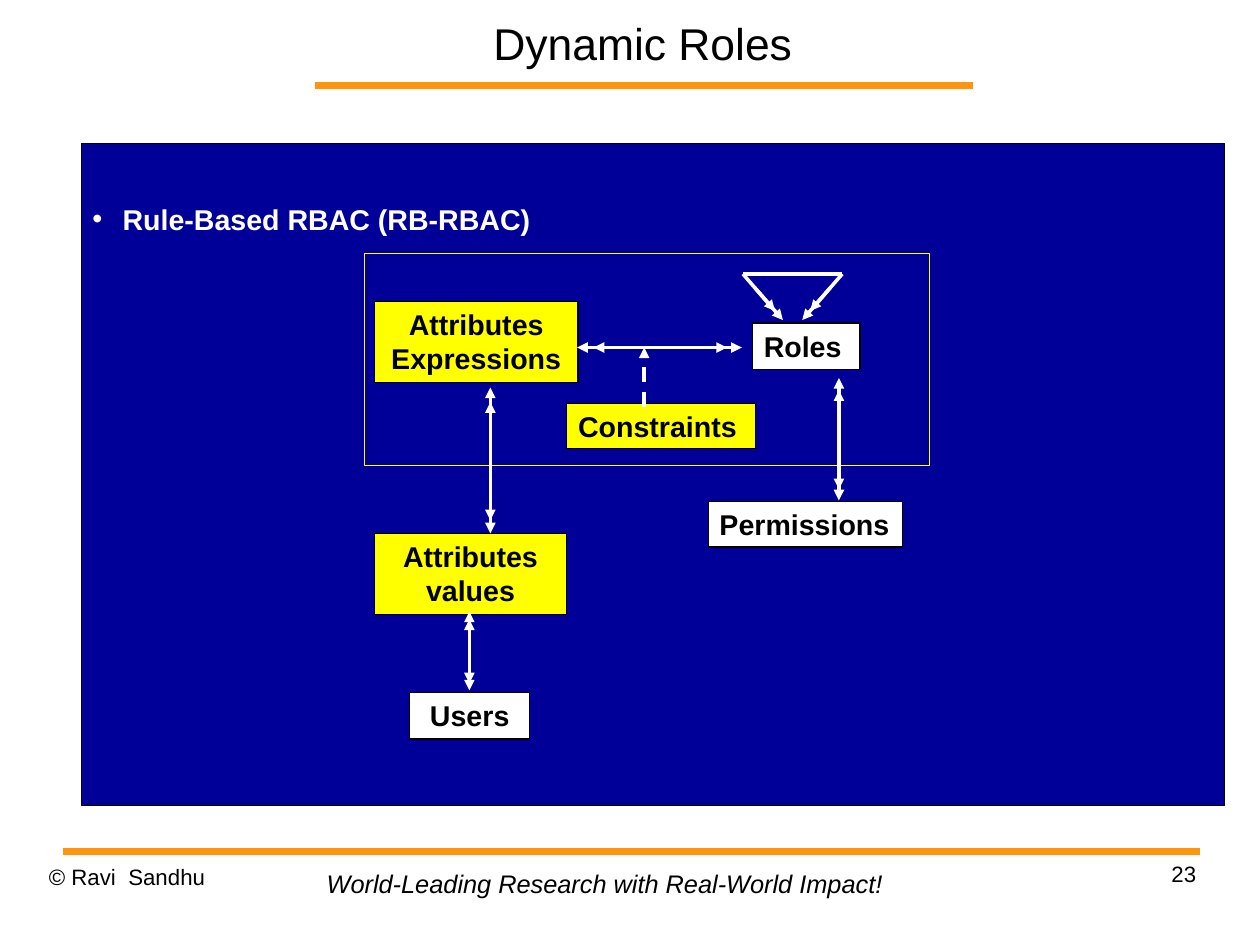
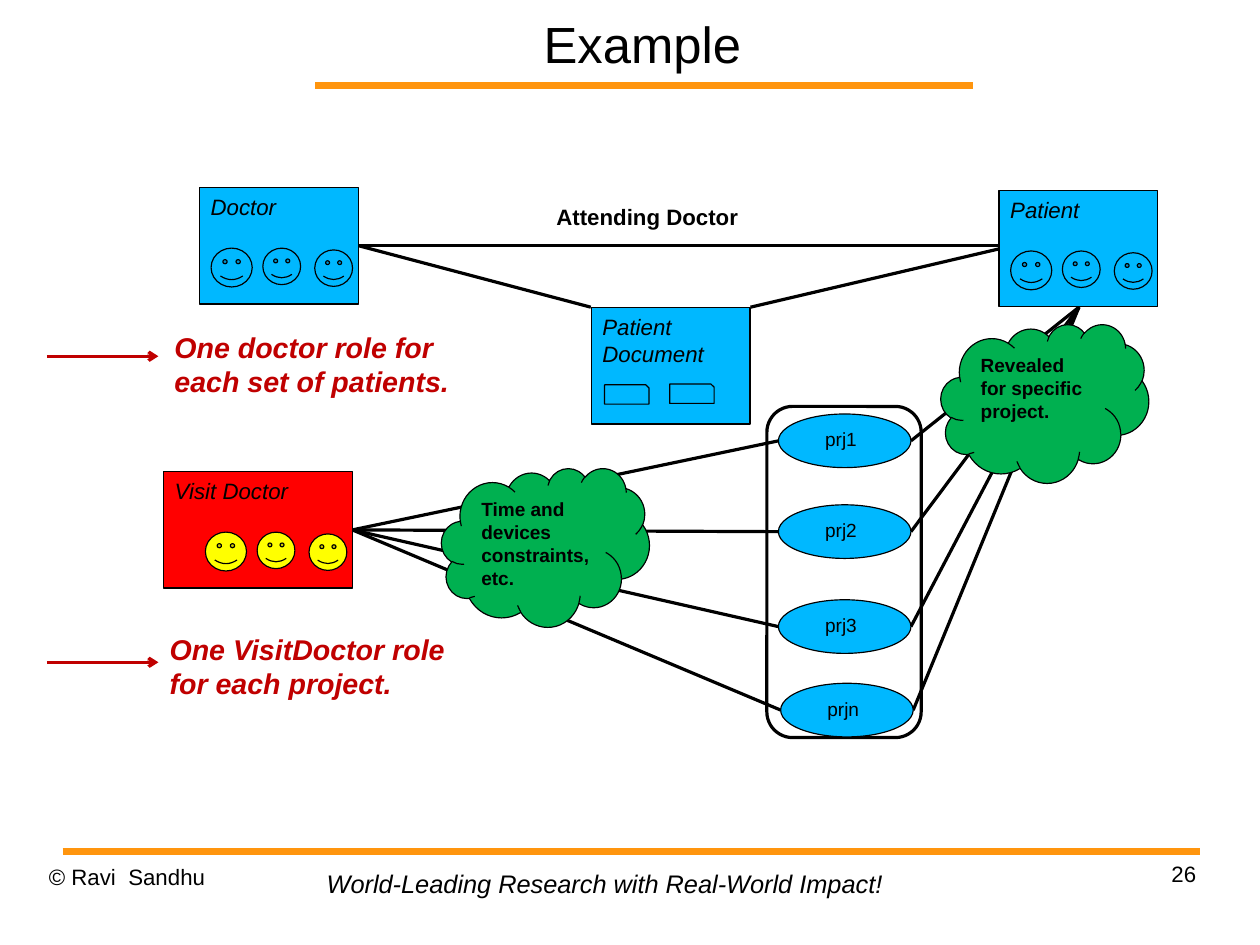
from lxml.etree import SubElement
from pptx import Presentation
from pptx.dml.color import RGBColor
from pptx.enum.dml import MSO_LINE
from pptx.enum.shapes import MSO_CONNECTOR, MSO_SHAPE as SHAPE
from pptx.enum.text import MSO_ANCHOR as ANCHOR, MSO_AUTO_SIZE, PP_ALIGN as ALIGN
from pptx.oxml.ns import qn
from pptx.util import Pt

# Shared look
SLIDE_W, SLIDE_H = 793.75, 595.25
FONT = "Arial"
BLACK, WHITE, YELLOW, ORANGE = "000000", "FFFFFF", "FFFF00", "FF950E"
NAVY, SKY, RED, GREEN, CRIMSON = "000099", "00B8FF", "FF0000", "00B050", "C00000"
INSETS = (7.2, 3.6, 7.2, 3.6)
NO_INSETS = (0, 0, 0, 0)

TITLE_BOX = (173.3, 0, 463, 54)
RULES = [((198.7, 54), (612.7, 54)), ((39.4, 536.2), (755.8, 536.2))]
COPYRIGHT = "© Ravi  Sandhu"
TAGLINE = "World-Leading Research with Real-World Impact!"

# Slide 1: text, box, fill, alignment
PANEL = (51.2, 90.2, 720, 417.2)
RBAC_FRAME = (229.7, 159.8, 356, 133.2)
RBAC_BOXES = [
    ("Attributes\nExpressions", (235.9, 189.8, 128.2, 51.1), YELLOW, ALIGN.CENTER),
    ("Users", (258.1, 436, 75.6, 29.5), WHITE, ALIGN.CENTER),
    ("Roles", (474.1, 203.4, 67.7, 29.5), WHITE, ALIGN.LEFT),
    ("Permissions", (446.2, 315.8, 122.4, 28.8), WHITE, ALIGN.LEFT),
    ("Constraints", (357.1, 254, 118.8, 28.8), YELLOW, ALIGN.LEFT),
    ("Attributes\nvalues", (235.9, 335.9, 121, 51.1), YELLOW, ALIGN.CENTER),
]
MANY_TO_MANY = [
    ((528.5, 238.1), (528.5, 315.2)),
    ((308.9, 244.1), (308.9, 336)),
    ((363.6, 218.9), (467.3, 218.9)),
    ((295.7, 385.2), (295.7, 434.9)),
]
CONSTRAINT_ARROW = ((405.8, 256.1), (405.8, 218.9))
HIERARCHY_TOP = ((468, 172.6), (530.6, 172.6))
HIERARCHY_TIPS = ((493.2, 201.6), (505.4, 201.6))

# Slide 2
ROLE_BOXES = [  # text, box, fill, face fill
    ("Doctor", (125.6, 118.1, 100.1, 73.4), SKY, SKY),
    ("Patient", (629.3, 119.9, 100.1, 73.4), SKY, SKY),
    ("Patient Document", (372.4, 193.7, 100.1, 73.4), SKY, None),
    ("Visit Doctor", (103, 297, 119.1, 73.4), RED, YELLOW),
]
FACES = [  # distance from right edge, distance from top, width, height
    (92.7, 38.2, 25.9, 24.5),
    (60.1, 38.2, 23.8, 23),
    (27.4, 39.3, 23.8, 23),
]
PAGES = [(380.9, 242.4, 28, 12.2), (421.9, 241.9, 28, 12.2)]
CARE_LINES = [
    ((226, 154.8), (629.3, 154.8)),
    ((226, 154.8), (372.2, 193.5)),
    ((472.8, 193.5), (629.3, 156.8)),
]
PROJECT_FRAME = (483.1, 256, 97.2, 208.6)
PROJECTS = [("prj1", 490.4, 260.8), ("prj2", 490.4, 318),
            ("prj3", 490.4, 377.8), ("prjn", 491.8, 430.4)]
PROJECT_W, PROJECT_H = 83.5, 33.8
VISIT_DOCTOR_PORT, PATIENT_PORT = (222, 333.8), (679.7, 193.5)
CLOUDS = [
    ("Time and devices constraints, etc.", (278.1, 294.9, 131, 100)),
    ("Revealed for specific project.", (592.7, 204.2, 131, 100)),
]
REMARKS = [  # text, box, arrow height
    ("One doctor role for each set of patients.", (102.8, 204.1, 189.4, 48.6), 224.4),
    ("One VisitDoctor role for each project.", (99.8, 394.6, 189.4, 48.6), 417.2),
]


def rgb(value):
    return RGBColor.from_string(value)


def write(frame, text, size, color=BLACK, bold=False, italic=False,
          align=ALIGN.LEFT, anchor=ANCHOR.TOP, insets=INSETS, bullet_indent=None):
    frame.text = text
    frame.word_wrap = True
    frame.auto_size = MSO_AUTO_SIZE.NONE
    frame.vertical_anchor = anchor
    (frame.margin_left, frame.margin_top,
     frame.margin_right, frame.margin_bottom) = map(Pt, insets)
    for paragraph in frame.paragraphs:
        paragraph.alignment = align
        if bullet_indent:
            props = paragraph._p.get_or_add_pPr()
            props.set("marL", str(Pt(bullet_indent)))
            props.set("indent", str(-Pt(bullet_indent)))
            SubElement(props, qn("a:buFont")).set("typeface", FONT)
            SubElement(props, qn("a:buChar")).set("char", "•")
        font = paragraph.font
        font.name, font.size = FONT, Pt(size)
        font.bold, font.italic = bold, italic
        font.color.rgb = rgb(color)


def add_label(slide, box, text, size, **style):
    label = slide.shapes.add_textbox(*map(Pt, box))
    write(label.text_frame, text, size, **style)


def add_box(slide, preset, box, fill=None, line=BLACK, width=0.75):
    shape = slide.shapes.add_shape(preset, *map(Pt, box))
    shape.shadow.inherit = False
    if fill:
        shape.fill.solid()
        shape.fill.fore_color.rgb = rgb(fill)
    else:
        shape.fill.background()
    shape.line.color.rgb = rgb(line)
    shape.line.width = Pt(width)
    return shape


def add_line(slide, start, end, color, width, head=None, tail=None, dash=None):
    connector = slide.shapes.add_connector(
        MSO_CONNECTOR.STRAIGHT, *map(Pt, (*start, *end)))
    connector.line.color.rgb = rgb(color)
    connector.line.width = Pt(width)
    if dash:
        connector.line.dash_style = dash
    props = connector._element.spPr
    for tag, arrow in (("a:headEnd", head), ("a:tailEnd", tail)):
        if arrow:
            SubElement(props.find(qn("a:ln")), qn(tag)).set("type", arrow)
    SubElement(props, qn("a:effectLst"))


def add_stacked_arrow(slide, start, end, inner, head=None):
    """Draw an arrow and a shorter one on top, giving doubled arrowheads."""
    def along(share):
        return tuple(a + (b - a) * share for a, b in zip(start, end))
    for first, last in ((0, 1), inner):
        add_line(slide, along(first), along(last), WHITE, 2.25, head, "triangle")


def start_slide(deck, title, title_size, number):
    slide = deck.slides.add_slide(deck.slide_layouts[5])
    heading = slide.shapes.title
    heading.left, heading.top, heading.width, heading.height = map(Pt, TITLE_BOX)
    write(heading.text_frame, title, title_size, align=ALIGN.CENTER,
          anchor=ANCHOR.MIDDLE, insets=NO_INSETS)
    for start, end in RULES:
        add_line(slide, start, end, ORANGE, 4.3)
    add_label(slide, (30.8, 543.6, 185, 41), COPYRIGHT, 14, insets=NO_INSETS)
    add_label(slide, (568.6, 542.2, 185, 41), number, 14,
              align=ALIGN.RIGHT, insets=NO_INSETS)
    add_label(slide, (198.7, 543.6, 366, 26.6), TAGLINE, 16, italic=True)
    return slide


def build_dynamic_roles(deck):
    slide = start_slide(deck, "Dynamic Roles", 28, "23")
    panel = add_box(slide, SHAPE.RECTANGLE, PANEL, NAVY)
    write(panel.text_frame, "Rule-Based RBAC (RB-RBAC)", 18, WHITE, bold=True,
          insets=(7.2, 37, 7.2, 3.6), bullet_indent=19)
    add_box(slide, SHAPE.RECTANGLE, RBAC_FRAME, line=YELLOW)
    for text, box, fill, align in RBAC_BOXES:
        part = add_box(slide, SHAPE.RECTANGLE, box, fill)
        write(part.text_frame, text, 18, bold=True, align=align)

    # Relations between the boxes
    for start, end in MANY_TO_MANY:
        add_stacked_arrow(slide, start, end, (0.1, 0.91), head="triangle")
    add_line(slide, *CONSTRAINT_ARROW, WHITE, 2.25, tail="triangle", dash=MSO_LINE.DASH)

    # Role hierarchy loop
    add_line(slide, *HIERARCHY_TOP, WHITE, 2.25)
    for corner, tip in zip(HIERARCHY_TOP, HIERARCHY_TIPS):
        add_stacked_arrow(slide, corner, tip, (0.3, 0.8))


def build_example(deck):
    slide = start_slide(deck, "Example", 32, "26")

    # Roles, their members and the document
    for text, box, fill, face_fill in ROLE_BOXES:
        role = add_box(slide, SHAPE.RECTANGLE, box, fill)
        write(role.text_frame, text, 14, italic=True)
        left, top, width, _ = box
        if face_fill:
            for from_right, down, face_w, face_h in FACES:
                face = (left + width - from_right, top + down, face_w, face_h)
                add_box(slide, SHAPE.SMILEY_FACE, face, face_fill)
    for page in PAGES:
        add_box(slide, SHAPE.SNIP_1_RECTANGLE, page, SKY)
    for start, end in CARE_LINES:
        add_line(slide, start, end, BLACK, 2)
    add_label(slide, (343.4, 124.6, 190, 28), "Attending Doctor", 14, bold=True)

    # Projects linked to the visiting doctor and the patient
    add_box(slide, SHAPE.ROUNDED_RECTANGLE, PROJECT_FRAME, width=2)
    for text, left, top in PROJECTS:
        middle = top + PROJECT_H / 2
        add_line(slide, VISIT_DOCTOR_PORT, (left, middle), BLACK, 2)
        add_line(slide, (left + PROJECT_W, middle), PATIENT_PORT, BLACK, 2)
        project = add_box(slide, SHAPE.OVAL, (left, top, PROJECT_W, PROJECT_H), SKY)
        write(project.text_frame, text, 12, anchor=ANCHOR.MIDDLE, insets=(17.2, 0, 0, 2))
    for text, box in CLOUDS:
        cloud = add_box(slide, SHAPE.CLOUD, box, GREEN)
        write(cloud.text_frame, text, 12, bold=True)

    # Remarks with pointers
    for text, box, arrow_y in REMARKS:
        add_label(slide, box, text, 18, color=CRIMSON, bold=True, italic=True)
        add_line(slide, (29.5, arrow_y), (99.8, arrow_y), CRIMSON, 2, tail="arrow")


def main():
    deck = Presentation()
    deck.slide_width, deck.slide_height = Pt(SLIDE_W), Pt(SLIDE_H)
    build_dynamic_roles(deck)
    build_example(deck)
    deck.save("out.pptx")


if __name__ == "__main__":
    main()
